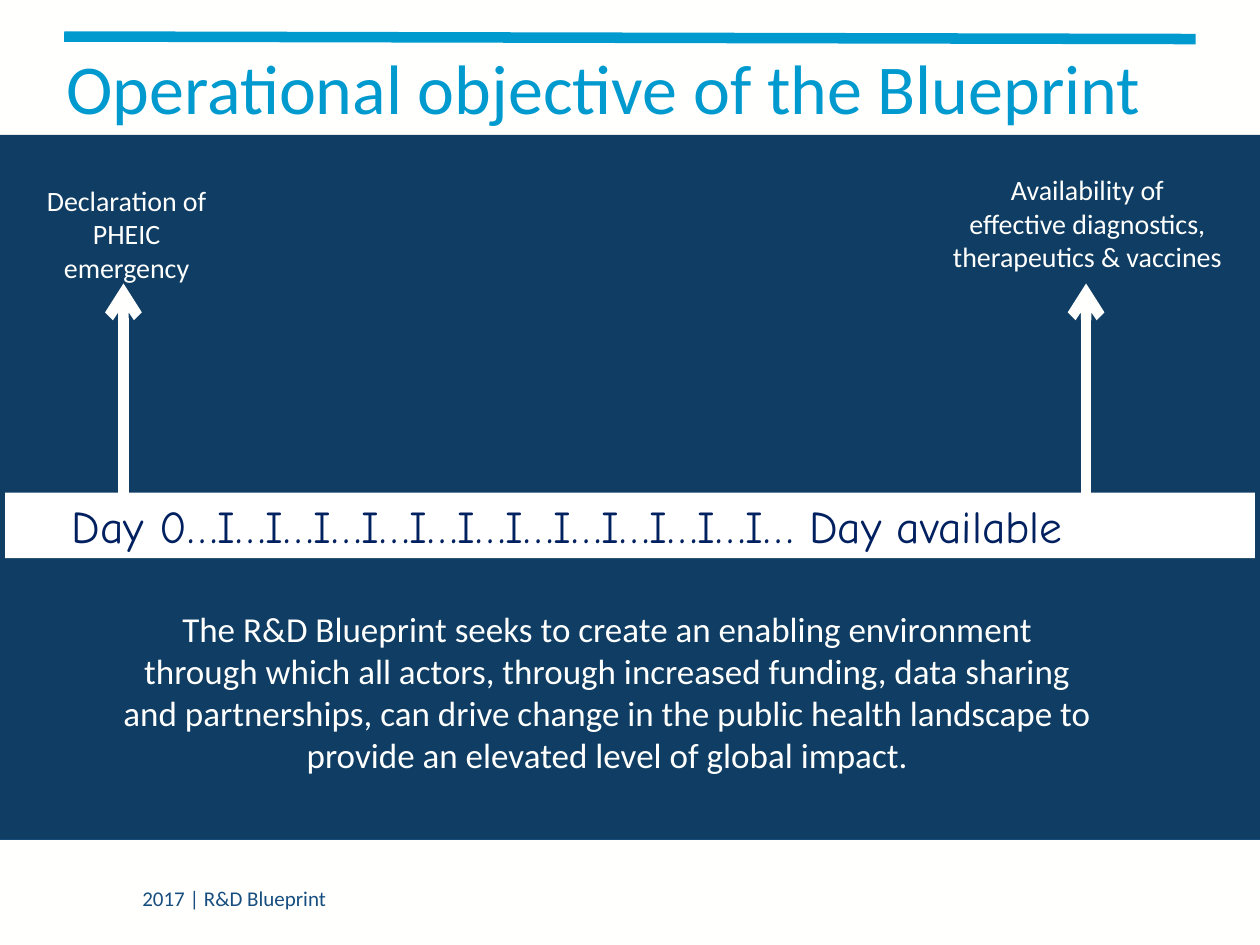
from dataclasses import dataclass
from typing import Optional

from lxml import etree
from pptx import Presentation
from pptx import util as u
from pptx.dml.color import RGBColor
from pptx.enum import shapes, text
from pptx.oxml.ns import qn

HUES = {
    "paper": "FFFFFE",
    "white": "FFFFFF",
    "navy": "0F3D63",
    "sky": "009ACF",
    "steel": "174E7F",
    "ink": "002060",
}
# The slide is a grid of 10 columns by 7.5 rows
COLS, ROWS = 10, 7.5
CELL = u.Inches(1)
MID, TOP = text.MSO_ANCHOR.MIDDLE, text.MSO_ANCHOR.TOP
LEFT, CENTER = text.PP_ALIGN.LEFT, text.PP_ALIGN.CENTER


@dataclass
class Box:
    col: float
    row: float
    wide: float
    high: float
    lines: tuple[str, ...] = ()
    size: int = 16
    hue: str = "paper"
    fill: Optional[str] = None
    font: str = "Calibri"
    align: int = CENTER
    anchor: int = MID
    pads: tuple[float, float, float, float] = (0.04, 0.04, 0.04, 0.04)


@dataclass
class Rule:
    start: tuple[float, float]
    end: tuple[float, float]
    hue: str
    width: float
    arrow: bool = False


def cells(*sizes: float) -> list[int]:
    return [round(size * CELL) for size in sizes]


def color(name: str) -> RGBColor:
    return RGBColor.from_string(HUES[name])


def draw_box(slide, box: Box) -> None:
    area = cells(box.col, box.row, box.wide, box.high)
    if box.fill:
        shape = slide.shapes.add_shape(shapes.MSO_SHAPE.RECTANGLE, *area)
        shape.shadow.inherit = False
        shape.fill.solid()
        shape.fill.fore_color.rgb = color(box.fill)
        shape.line.fill.background()
    else:
        shape = slide.shapes.add_textbox(*area)
    frame = shape.text_frame
    frame.word_wrap = True
    frame.vertical_anchor = box.anchor
    (frame.margin_left, frame.margin_top,
     frame.margin_right, frame.margin_bottom) = cells(*box.pads)
    for i, line in enumerate(box.lines):
        para = frame.paragraphs[0] if i == 0 else frame.add_paragraph()
        para.text = line
        para.alignment = box.align
        para.font.name = box.font
        para.font.size = u.Pt(box.size)
        para.font.color.rgb = color(box.hue)


def draw_rule(slide, rule: Rule) -> None:
    link = slide.shapes.add_connector(
        shapes.MSO_CONNECTOR.STRAIGHT, *cells(*rule.start, *rule.end))
    link.line.color.rgb = color(rule.hue)
    link.line.width = u.Pt(rule.width)
    if rule.arrow:
        stroke = link.line._get_or_add_ln()
        etree.SubElement(stroke, qn("a:tailEnd"), type="arrow")
    etree.SubElement(link._element.spPr, qn("a:effectLst"))


def arrow(col: float) -> Rule:
    return Rule((col, 3.91), (col, 2.25), "paper", 6, arrow=True)


PARTS = [
    # Frame and footer
    Rule((0, 6.66), (COLS, 6.66), "steel", 1.5),
    Box(1, 6.98, 5.43, 0.3, ("2017 | R&D Blueprint",), 12, "steel",
        align=LEFT, anchor=TOP, pads=(0.13, 0.05, 0.1, 0.05)),
    Rule((0.51, 0.29), (9.49, 0.31), "sky", 6),
    Box(0, 1.07, COLS, 5.59, fill="navy"),
    # Title
    Box(0.43, 0.3, 9.07, 0.77, ("Operational objective of the Blueprint",),
        40, "sky", align=LEFT, pads=(0.1, 0.05, 0.1, 0.05)),
    # Aim
    Box(0.92, 4.77, 8.65, 1.45,
        ("The R&D Blueprint seeks to create an enabling environment through "
         "which all actors, through increased funding, data sharing and "
         "partnerships, can drive change in the public health landscape to "
         "provide an elevated level of global impact.",),
        20, anchor=TOP, pads=(0.05, 0.05, 0.9, 0.05)),
    # Timeline
    Box(0.04, 3.91, 9.92, 0.52,
        ("Day 0" + "…I" * 12 + "… Day available",), 26, "ink", "white",
        "Comic Neue", LEFT, pads=(0.53, 0.04, 0.04, 0.04)),
    # Start and end marks
    Box(0.31, 1.41, 1.39, 0.89, ("Declaration of PHEIC emergency",)),
    arrow(0.98),
    Box(7.52, 1.19, 2.22, 1.16,
        ("Availability of", "effective diagnostics, therapeutics & vaccines")),
    arrow(8.62),
]


def main() -> None:
    deck = Presentation()
    deck.slide_width, deck.slide_height = cells(COLS, ROWS)
    slide = deck.slides.add_slide(deck.slide_layouts[6])
    slide.background.fill.solid()
    slide.background.fill.fore_color.rgb = color("paper")
    for part in PARTS:
        if isinstance(part, Box):
            draw_box(slide, part)
        else:
            draw_rule(slide, part)
    deck.save("out.pptx")


if __name__ == "__main__":
    main()
